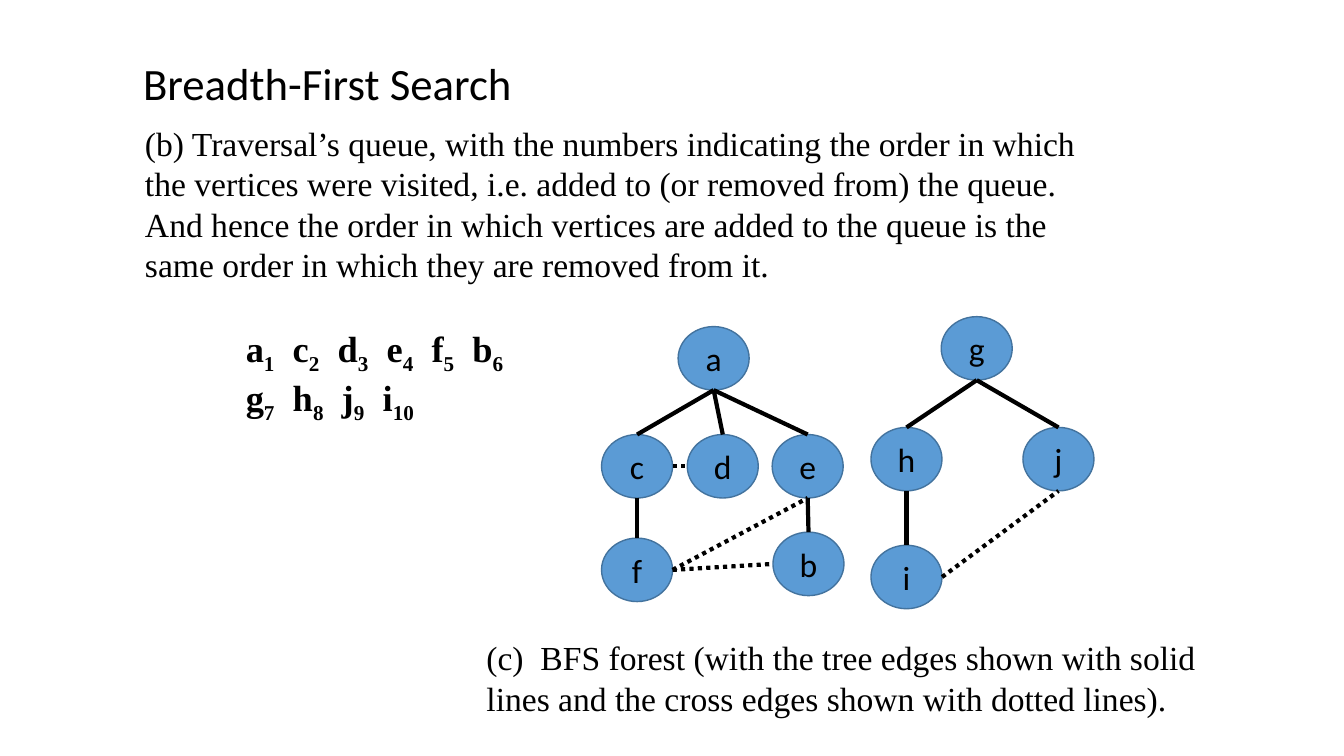
from pptx import Presentation
from pptx.dml.color import RGBColor
from pptx.enum.dml import MSO_LINE
from pptx.enum.shapes import MSO_CONNECTOR, MSO_SHAPE
from pptx.enum.text import MSO_ANCHOR, MSO_AUTO_SIZE, PP_ALIGN
from pptx.oxml.ns import qn
from pptx.util import Cm, Pt
from lxml.etree import SubElement

# Content
TITLE = "Breadth-First Search"
INTRO = ("(b) Traversal’s queue, with the numbers indicating the order in which "
         "the vertices were visited, i.e. added to (or removed from) the queue. "
         "And hence the order in which vertices are added to the queue is the "
         "same order in which they are removed from it.")
NOTE = ("(c)  BFS forest (with the tree edges shown with solid lines "
        "and the cross edges shown with dotted lines).")
QUEUE = ["acdefb", "ghji"]
LEADS = [1.5, 1.0]

# Left and top of each vertex, in cm
NODES = {
    "a": (17.09, 8.23), "c": (15.16, 10.95), "d": (17.32, 10.95),
    "e": (19.46, 10.95), "f": (15.16, 13.56), "b": (19.48, 13.41),
    "g": (23.72, 7.98), "h": (21.95, 10.77), "j": (25.78, 10.77),
    "i": (21.95, 13.74),
}
TREE = ["ac", "ad", "ae", "cf", "eb", "gh", "gj", "hi"]
CROSS = [("c", "right", "d", "left"), ("f", "right", "e", "bottom"),
         ("f", "right", "b", "left"), ("i", "right", "j", "bottom")]
SIDES = {"top": (0.5, 0), "bottom": (0.5, 1), "left": (0, 0.5), "right": (1, 0.5)}
WIDE, HIGH = 1.79, 1.6
COLORS = {"text": "000000", "node": "5B9BD5", "rim": "43739E"}
SERIF, SANS = "Times New Roman", "Calibri"


def color(name):
    return RGBColor.from_string(COLORS[name])


def place(shape, left, top, width, height):
    shape.left, shape.top = Cm(left), Cm(top)
    shape.width, shape.height = Cm(width), Cm(height)


def style(para, face, size, bold=False):
    font = para.font
    font.name, font.size, font.bold = face, Pt(size), bold
    font.color.rgb = color("text")


def plain(para, indent=0):
    props = para._p.get_or_add_pPr()
    props.set("marL", str(Cm(indent)))
    props.set("indent", "0")
    SubElement(props, qn("a:buNone"))


def point(name, side):
    left, top = NODES[name]
    across, down = SIDES[side]
    return Cm(left + across * WIDE), Cm(top + down * HIGH)


def link(start, side, end, goal, dotted=False):
    line = slide.shapes.add_connector(
        MSO_CONNECTOR.STRAIGHT, *point(start, side), *point(end, goal))
    line.line.color.rgb = color("text")
    line.line.width = Pt(3)
    if dotted:
        line.line.dash_style = MSO_LINE.ROUND_DOT
    SubElement(line._element.spPr, qn("a:effectLst"))


deck = Presentation()
deck.slide_width, deck.slide_height = Cm(33.87), Cm(19.05)
slide = deck.slides.add_slide(deck.slide_layouts[1])

# Title
title = slide.shapes.title
place(title, 3.35, 0.61, 9.91, 2.11)
frame = title.text_frame
frame.text = TITLE
frame.word_wrap = False
frame.auto_size = MSO_AUTO_SIZE.NONE
frame.vertical_anchor = MSO_ANCHOR.TOP
para = frame.paragraphs[0]
para.alignment = PP_ALIGN.LEFT
para.line_spacing = 1.5
style(para, SANS, 32)

# Explanation and numbered queue
body = slide.placeholders[1]
place(body, 3.4, 2.97, 24.16, 8.59)
frame = body.text_frame
frame.auto_size = MSO_AUTO_SIZE.NONE
frame.text = INTRO
para = frame.paragraphs[0]
para.space_before, para.space_after = Pt(0), Pt(12)
style(para, SERIF, 24)
plain(para)

count = 0
for row, lead in zip(QUEUE, LEADS):
    para = frame.add_paragraph()
    para.space_before, para.line_spacing = Pt(0), lead
    style(para, SERIF, 26, True)
    plain(para, 2.54)
    for spot, name in enumerate(row):
        count += 1
        para.add_run().text = "  " + name if spot else name
        sub = para.add_run()
        sub.text = str(count)
        sub.font._element.set("baseline", "-25000")

# Forest vertices
for name, (left, top) in NODES.items():
    node = slide.shapes.add_shape(
        MSO_SHAPE.OVAL, Cm(left), Cm(top), Cm(WIDE), Cm(HIGH))
    node.shadow.inherit = False
    node.fill.solid()
    node.fill.fore_color.rgb = color("node")
    node.line.color.rgb = color("rim")
    node.line.width = Pt(1)
    frame = node.text_frame
    frame.text = name
    frame.vertical_anchor = MSO_ANCHOR.MIDDLE
    para = frame.paragraphs[0]
    para.alignment = PP_ALIGN.CENTER
    style(para, SANS, 24)

# Tree edges are solid, cross edges dotted
for start, end in TREE:
    link(start, "bottom", end, "top")
for ends in CROSS:
    link(*ends, dotted=True)

# Caption under the forest
note = slide.shapes.add_textbox(Cm(12.01), Cm(15.93), Cm(18.97), Cm(2.31))
frame = note.text_frame
frame.word_wrap = True
frame.text = NOTE
style(frame.paragraphs[0], SERIF, 24)

deck.save("out.pptx")
